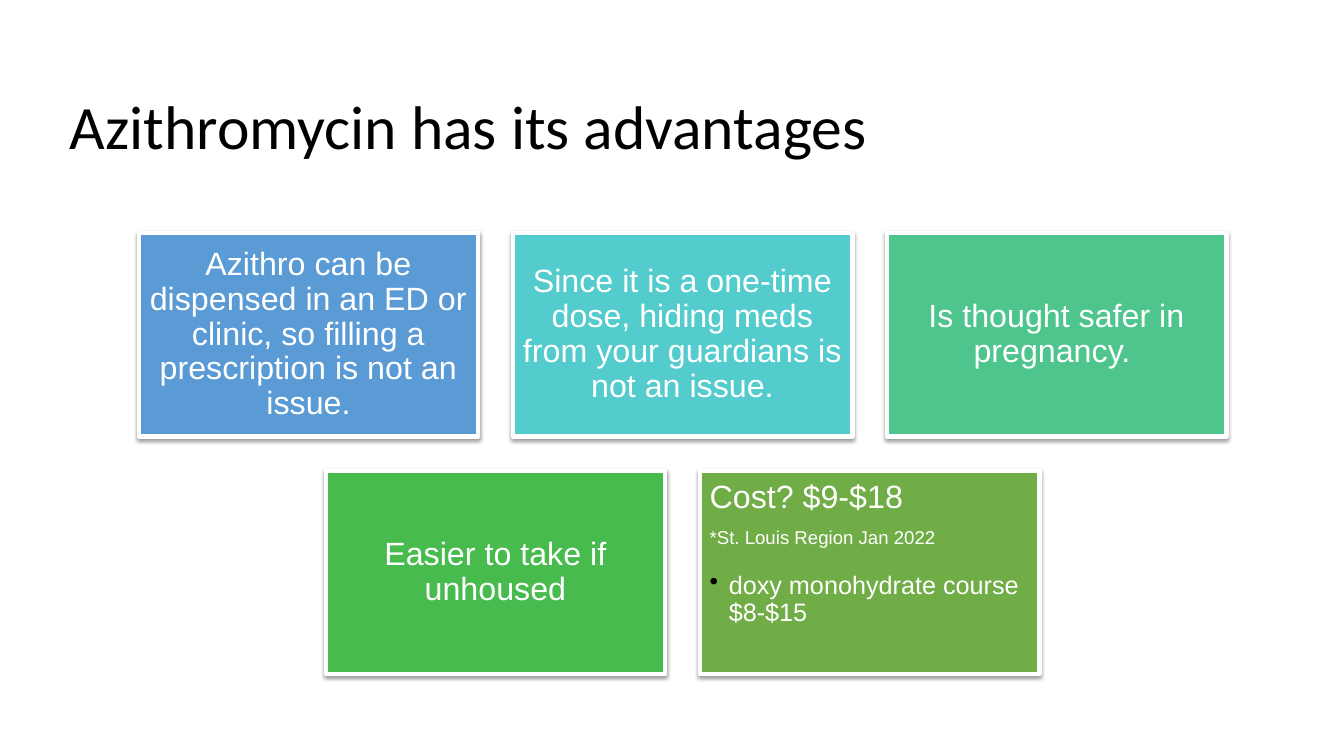
from dataclasses import dataclass

from lxml.etree import SubElement
from pptx import Presentation
from pptx.dml.color import RGBColor
from pptx.enum.shapes import MSO_SHAPE as Shape
from pptx.enum.text import MSO_ANCHOR as Anchor, MSO_AUTO_SIZE as AutoSize, PP_ALIGN as Align
from pptx.oxml.ns import qn
from pptx.util import Inches, Pt


@dataclass(frozen=True)
class Theme:
    title_font: str = "Calibri"
    body_font: str = "Arial"
    title_size: int = 44
    card_size: int = 23
    detail_size: int = 18
    black: str = "000000"
    white: str = "FFFFFF"
    blue: str = "5B9BD5"
    turquoise: str = "54CCCD"
    mint: str = "4DC58D"
    green: str = "48BB4F"
    olive: str = "70AD47"


class SlideBuilder:
    def __init__(self, slide, theme):
        self.slide = slide
        self.theme = theme

    def style(self, paragraph, font, size, color, align=Align.LEFT):
        paragraph.alignment = align
        paragraph.line_spacing = 0.9
        paragraph.font.name = font
        paragraph.font.size = Pt(size)
        paragraph.font.bold = False
        paragraph.font.color.rgb = RGBColor.from_string(color)

    def title(self, text, left, top, width, height):
        heading = self.slide.shapes.title
        heading.left, heading.top = Inches(left), Inches(top)
        heading.width, heading.height = Inches(width), Inches(height)
        frame = heading.text_frame
        frame.text = text
        frame.auto_size = AutoSize.NONE
        frame.vertical_anchor = Anchor.MIDDLE
        self.style(frame.paragraphs[0], self.theme.title_font,
                   self.theme.title_size, self.theme.black)

    def card(self, left, top, width, height, fill):
        card = self.slide.shapes.add_shape(
            Shape.RECTANGLE, Inches(left), Inches(top), Inches(width), Inches(height))
        card.fill.solid()
        card.fill.fore_color.rgb = RGBColor.from_string(fill)
        card.line.color.rgb = RGBColor.from_string(self.theme.white)
        card.line.width = Pt(3)
        self.soft_shadow(card)
        frame = card.text_frame
        frame.word_wrap = True
        frame.margin_left = frame.margin_right = Inches(0.1)
        frame.margin_top = frame.margin_bottom = Inches(0.1)
        return frame

    def soft_shadow(self, card):
        card.shadow.inherit = False
        effects = card._element.spPr.find(qn("a:effectLst"))
        shadow = SubElement(effects, qn("a:outerShdw"), blurRad=str(Pt(3.1)),
                            dist=str(Pt(1.6)), dir="5400000", rotWithShape="0")
        color = SubElement(shadow, qn("a:srgbClr"), val=self.theme.black)
        SubElement(color, qn("a:alpha"), val="38000")

    def statement(self, frame, text):
        frame.vertical_anchor = Anchor.MIDDLE
        frame.text = text
        self.style(frame.paragraphs[0], self.theme.body_font,
                   self.theme.card_size, self.theme.white, Align.CENTER)

    def cost(self, frame, price, footnote, comparison):
        theme = self.theme
        frame.vertical_anchor = Anchor.TOP
        frame.text = "\n".join((price, footnote, comparison))
        price_line, footnote_line, comparison_line = frame.paragraphs
        footnote_line.runs[0]._r.get_or_add_rPr().set("baseline", "30000")
        self.bullet(comparison_line)
        for line in (price_line, footnote_line):
            self.style(line, theme.body_font, theme.card_size, theme.white)
            line.space_after = Pt(8)
        self.style(comparison_line, theme.body_font, theme.detail_size, theme.white)

    def bullet(self, paragraph):
        paragraph.level = 1
        properties = paragraph._p.get_or_add_pPr()
        properties.set("marL", str(Inches(0.19)))
        properties.set("indent", str(Inches(-0.19)))
        color = SubElement(properties, qn("a:buClr"))
        SubElement(color, qn("a:srgbClr"), val=self.theme.black)
        SubElement(properties, qn("a:buChar"), char="•")


def main():
    theme = Theme()
    deck = Presentation()
    deck.slide_width, deck.slide_height = Inches(13.33), Inches(7.5)
    builder = SlideBuilder(deck.slides.add_slide(deck.slide_layouts[5]), theme)
    builder.title("Azithromycin has its advantages", 0.59, 0.56, 10.78, 1.45)

    # Advantages, by row; the cost card has several lines
    rows = [
        [(theme.blue, "Azithro can be dispensed in an ED or clinic, "
                      "so filling a prescription is not an issue."),
         (theme.turquoise, "Since it is a one-time dose, hiding meds "
                           "from your guardians is not an issue."),
         (theme.mint, "Is thought safer in pregnancy.\u00a0")],
        [(theme.green, "Easier to take if unhoused"),
         (theme.olive, ("Cost? $9-$18", "*St. Louis Region Jan 2022",
                        "doxy monohydrate course $8-$15"))],
    ]

    # Each row of cards is centred on the same axis
    width, height, gap = 3.37, 2.02, 0.34
    center, first_top = 6.77, 2.31
    for row_index, row in enumerate(rows):
        row_left = center - (len(row) * (width + gap) - gap) / 2
        top = first_top + row_index * (height + gap)
        for column, (fill, content) in enumerate(row):
            frame = builder.card(row_left + column * (width + gap), top, width, height, fill)
            if isinstance(content, tuple):
                builder.cost(frame, *content)
            else:
                builder.statement(frame, content)

    deck.save("out.pptx")


if __name__ == "__main__":
    main()
